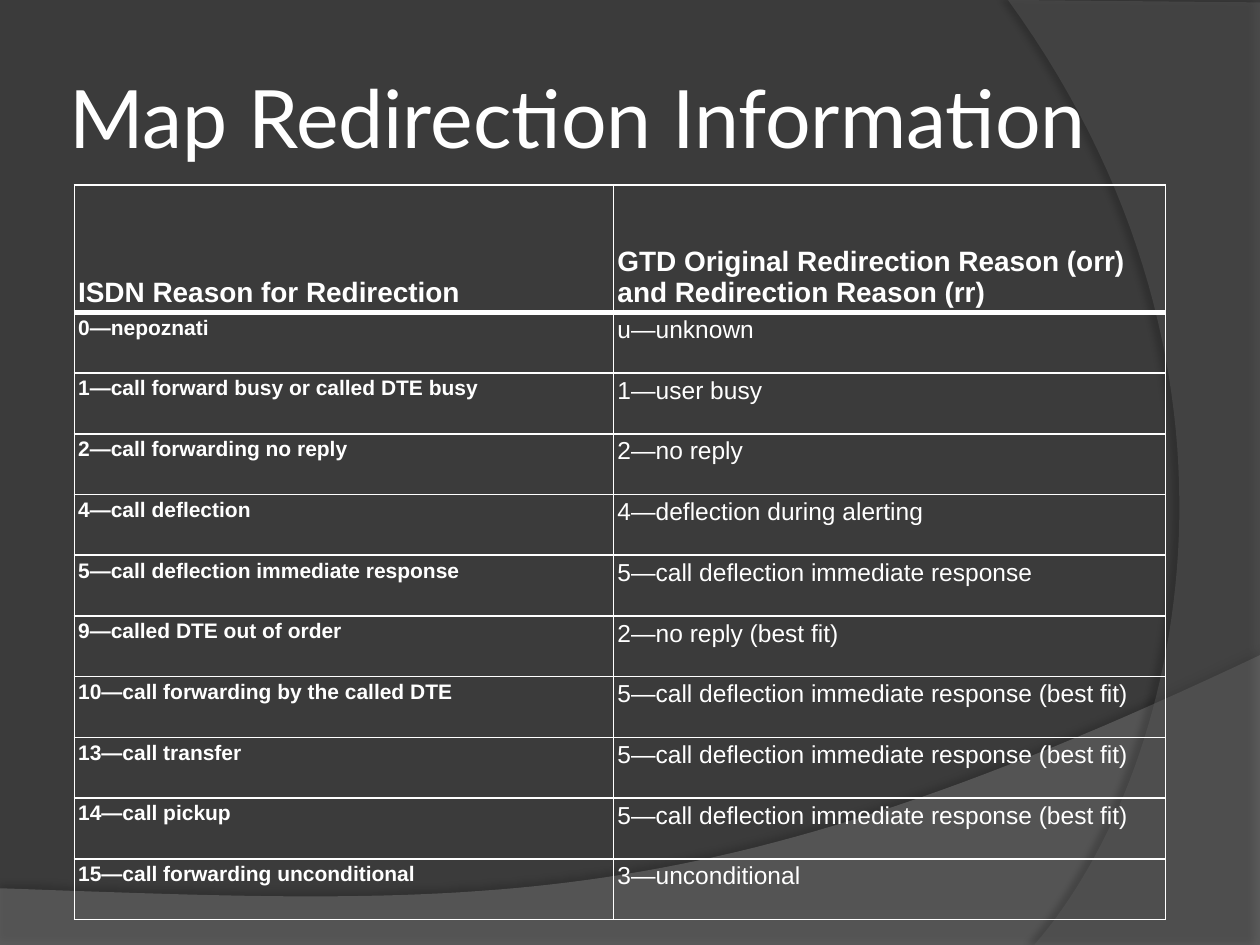
from lxml.etree import SubElement as Sub
from pptx import Presentation
from pptx.dml.color import RGBColor
from pptx.enum.text import MSO_ANCHOR as Anchor
from pptx.oxml.ns import qn
from pptx.util import Pt

TITLE = "Map Redirection Information"
HEAD = ("ISDN Reason for Redirection",
        "GTD Original Redirection Reason (orr) and Redirection Reason (rr)")
BEST = "5—call deflection immediate response (best fit)"
ROWS = [
    ("0—nepoznati", "u—unknown"),
    ("1—call forward busy or called DTE busy", "1—user busy"),
    ("2—call forwarding no reply", "2—no reply"),
    ("4—call deflection", "4—deflection during alerting"),
    ("5—call deflection immediate response",
     "5—call deflection immediate response"),
    ("9—called DTE out of order", "2—no reply (best fit)"),
    ("10—call forwarding by the called DTE", BEST),
    ("13—call transfer", BEST),
    ("14—call pickup", BEST),
    ("15—call forwarding unconditional", "3—unconditional"),
]
# Each wave: straight corners, then the four control points of its curved edge
WAVES = [
    dict(corners=[(0, 540), (720, 540)], fill="7F7F7F", alpha=45,
         curve=[(720, 374.4), (402.5, 525), (281.5, 517.7), (0, 507.6)],
         shade=35, dist=3.5, angle=270),
    dict(corners=[(720, 1.4), (720, 540)], fill="5E5E5E", alpha=40,
         curve=[(591, 540), (673.2, 445.7), (733, 216), (576, 0)],
         shade=45, dist=4, angle=180),
]
LEFT, TOP = 42.5, 105.8
COLS = (308.2, 315.4)
HEAD_H, ROW_H = 72.7, 34.7
WHITE = "FFFFFF"


def rgb(code):
    return RGBColor.from_string(code)


def bezier(pts, steps=60):
    for i in range(steps + 1):
        t = i / steps
        u = 1 - t
        mix = (u**3, 3 * u * u * t, 3 * u * t * t, t**3)
        yield tuple(sum(m * p[k] for m, p in zip(mix, pts)) for k in (0, 1))


def tint(parent, code, alpha):
    clr = Sub(parent, qn("a:srgbClr"), val=code)
    Sub(clr, qn("a:alpha"), val=str(alpha * 1000))


def add_wave(slide, wave):
    pts = [(Pt(x), Pt(y)) for x, y in wave["corners"] + list(bezier(wave["curve"]))]
    pen = slide.shapes.build_freeform(*pts[0], scale=1.0)
    pen.add_line_segments(pts[1:], close=True)
    shape = pen.convert_to_shape()
    shape.line.fill.background()
    shape.fill.solid()
    shape.fill.fore_color.rgb = rgb(wave["fill"])
    props = shape._element.spPr
    clr = props.find(qn("a:solidFill"))[0]
    Sub(clr, qn("a:alpha"), val=str(wave["alpha"] * 1000))
    shape.shadow.inherit = False
    glow = Sub(props.find(qn("a:effectLst")), qn("a:outerShdw"),
               blurRad=str(Pt(4)), dist=str(Pt(wave["dist"])),
               dir=str(wave["angle"] * 60000), algn="ctr", rotWithShape="0")
    tint(glow, "000000", wave["shade"])


def write(frame, text, font, size, bold=False):
    para = frame.paragraphs[0]
    run = para.add_run()
    run.text = text
    run.font.name, run.font.size, run.font.bold = font, Pt(size), bold
    run.font.color.rgb = rgb(WHITE)
    return para


def add_rule(cell, side, width):
    line = Sub(cell._tc.get_or_add_tcPr(), qn("a:ln" + side), w=str(Pt(width)))
    Sub(Sub(line, qn("a:solidFill")), qn("a:srgbClr"), val=WHITE)


def fill_cell(cell, text, row, col):
    head = row == 0
    for side in "LRTB":
        thick = (row, side) in ((0, "B"), (1, "T"))
        add_rule(cell, side, 3 if thick else 1)
    cell.fill.background()
    cell.margin_left = cell.margin_right = Pt(2.2)
    cell.margin_top = cell.margin_bottom = Pt(2.2)
    cell.vertical_anchor = Anchor.BOTTOM if head else Anchor.TOP
    size = 16 if head else (12, 14)[col]
    para = write(cell.text_frame, text, "Arial", size, head or col == 0)
    para.space_before = Pt(6 if head else 0.8)
    para.space_after = Pt(0 if head else 4.5)


def add_grid(slide):
    data = [HEAD] + ROWS
    high = HEAD_H + ROW_H * len(ROWS)
    table = slide.shapes.add_table(len(data), len(COLS), Pt(LEFT), Pt(TOP),
                                   Pt(sum(COLS)), Pt(high)).table
    table.first_row = table.horz_banding = False
    for col, wide in zip(table.columns, COLS):
        col.width = Pt(wide)
    for r, texts in enumerate(data):
        table.rows[r].height = Pt(ROW_H if r else HEAD_H)
        for c, text in enumerate(texts):
            fill_cell(table.cell(r, c), text, r, c)


def add_title(slide):
    box = slide.shapes.add_textbox(Pt(36), Pt(21.6), Pt(588.2), Pt(90))
    frame = box.text_frame
    frame.word_wrap = True
    frame.vertical_anchor = Anchor.MIDDLE
    frame.margin_left = frame.margin_right = Pt(3.6)
    write(frame, TITLE, "Lato", 46)


def main():
    deck = Presentation()
    deck.slide_width, deck.slide_height = Pt(720), Pt(540)
    slide = deck.slides.add_slide(deck.slide_layouts[6])
    back = slide.background.fill
    back.solid()
    back.fore_color.rgb = rgb("3B3B3B")
    for wave in WAVES:
        add_wave(slide, wave)
    add_title(slide)
    add_grid(slide)
    deck.save("out.pptx")


if __name__ == "__main__":
    main()
